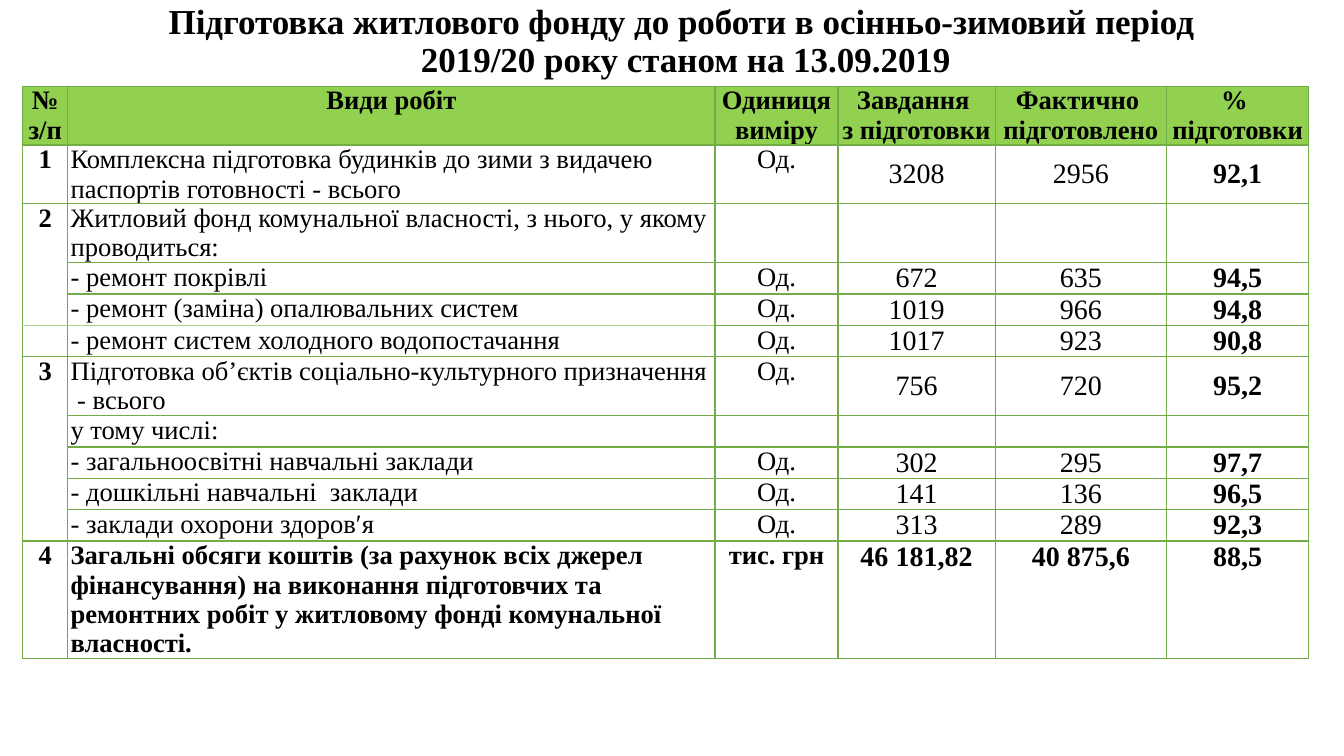
from pptx import Presentation
from pptx.dml.color import RGBColor as RGB
from pptx.enum.text import MSO_ANCHOR as ANCHOR, MSO_AUTO_SIZE as AUTO, PP_ALIGN as ALIGN
from pptx.oxml import parse_xml
from pptx.oxml.ns import nsdecls
from pptx.util import Cm, Pt

COLORS = {"text": "000000", "head": "92D050", "grid": "70AD47", "soft": "A9D18E"}
UNIT = "Од."
TITLE = ["Підготовка житлового фонду до роботи в осінньо-зимовий період ",
         "2019/20 року станом на 13.09.2019"]
ROWS = [
    ["№ з/п", "Види робіт", "Одиниця виміру", "Завдання \nз підготовки",
     "Фактично \nпідготовлено", "% \nпідготовки"],
    ["1", "Комплексна підготовка будинків до зими з видачею паспортів готовності - всього",
     UNIT, "3208", "2956", "92,1"],
    ["2", "Житловий фонд комунальної власності, з нього, у якому проводиться:", "", "", "", ""],
    ["", "- ремонт покрівлі", UNIT, "672", "635", "94,5"],
    ["", "- ремонт (заміна) опалювальних систем", UNIT, "1019", "966", "94,8"],
    ["", "- ремонт систем холодного водопостачання", UNIT, "1017", "923", "90,8"],
    ["3", "Підготовка об’єктів соціально-культурного призначення  - всього",
     UNIT, "756", "720", "95,2"],
    ["", "у тому числі:", "", "", "", ""],
    ["", "- загальноосвітні навчальні заклади", UNIT, "302", "295", "97,7"],
    ["", "- дошкільні навчальні  заклади", UNIT, "141", "136", "96,5"],
    ["", "- заклади охорони здоров′я", UNIT, "313", "289", "92,3"],
    ["4", "Загальні обсяги коштів (за рахунок всіх джерел фінансування) на виконання "
          "підготовчих та ремонтних робіт у житловому фонді комунальної власності.",
     "тис. грн", "46 181,82", "40 875,6", "88,5"],
]
COLS = [1.14, 16.31, 3.1, 3.96, 4.32, 3.58]
ONE, TWO, FOUR = 0.79, 1.48, 2.96
HEIGHTS = [TWO] * 3 + [ONE] * 3 + [TWO] + [ONE] * 4 + [FOUR]
MERGES = [(2, 4), (6, 10)]
SOFT_ABOVE = 5
LAST = len(ROWS) - 1


class Deck:
    """Holds the text style and the current slide."""

    def __init__(self, prs, font):
        """Add a title-only slide."""
        self.font = font
        self.s = prs.slides.add_slide(prs.slide_layouts[5])

    def run(self, p, text, size, bold):
        """Add one styled run to a paragraph."""
        r = p.add_run()
        r.text = text
        r.font.name, r.font.size, r.font.bold = self.font, Pt(size), bold
        r.font.color.rgb = RGB.from_string(COLORS["text"])

    def title(self, lines, x, y, w, h, size):
        """Place the title with one line break between its lines."""
        sp = self.s.shapes.title
        sp.left, sp.top, sp.width, sp.height = Cm(x), Cm(y), Cm(w), Cm(h)
        tf = sp.text_frame
        tf.word_wrap, tf.auto_size, tf.vertical_anchor = True, AUTO.NONE, ANCHOR.MIDDLE
        p = tf.paragraphs[0]
        p.alignment, p.line_spacing = ALIGN.CENTER, 0.9
        for i, line in enumerate(lines):
            if i:
                p.add_line_break()
            self.run(p, line, size, True)

    def borders(self, cell, top, bottom):
        """Draw the four borders of a cell."""
        tc_pr = cell._tc.get_or_add_tcPr()
        for side, color in (("L", "grid"), ("R", "grid"), ("T", top), ("B", bottom)):
            tc_pr.append(parse_xml(
                f'<a:ln{side} {nsdecls("a")} w="12700"><a:solidFill>'
                f'<a:srgbClr val="{COLORS[color]}"/></a:solidFill></a:ln{side}>'))

    def cell(self, cell, text, size, bold, align, anchor, fill):
        """Fill a cell and write its paragraphs."""
        cell.margin_left = cell.margin_right = Cm(0.07)
        cell.margin_top = cell.margin_bottom = 0
        cell.vertical_anchor = anchor
        if fill:
            cell.fill.solid()
            cell.fill.fore_color.rgb = RGB.from_string(COLORS[fill])
        else:
            cell.fill.background()
        tf = cell.text_frame
        for i, line in enumerate(text.split("\n") if text else []):
            p = tf.add_paragraph() if i else tf.paragraphs[0]
            p.alignment = align
            self.run(p, line, size, bold)

    def table(self, x, y):
        """Build the table of works."""
        frame = self.s.shapes.add_table(len(ROWS), len(COLS), Cm(x), Cm(y),
                                        Cm(sum(COLS)), Cm(sum(HEIGHTS)))
        tbl = frame.table
        tbl.first_row = tbl.horz_banding = False
        for col, width in zip(tbl.columns, COLS):
            col.width = Cm(width)
        for row, height in zip(tbl.rows, HEIGHTS):
            row.height = Cm(height)
        for i, texts in enumerate(ROWS):
            for j, text in enumerate(texts):
                cell, edge, number = tbl.cell(i, j), i in (0, LAST), j > 2
                self.borders(cell, "soft" if j < 2 and i == SOFT_ABOVE else "grid",
                             "soft" if j < 2 and i == SOFT_ABOVE - 1 else "grid")
                self.cell(cell, text, 20 if number and i else 19, edge or j in (0, 5),
                          ALIGN.LEFT if j == 1 and i else ALIGN.CENTER,
                          ANCHOR.MIDDLE if number and not edge else ANCHOR.TOP,
                          None if i else "head")
        for first, last in MERGES:
            tbl.cell(first, 0).merge(tbl.cell(last, 0))


def main():
    """Build and save the slide."""
    prs = Presentation()
    prs.slide_width, prs.slide_height = Cm(33.87), Cm(19.05)
    deck = Deck(prs, "Times New Roman")
    deck.title(TITLE, 1.57, 0.17, 31.42, 1.78, 25)
    deck.table(0.57, 2.17)
    prs.save("out.pptx")


if __name__ == "__main__":
    main()
